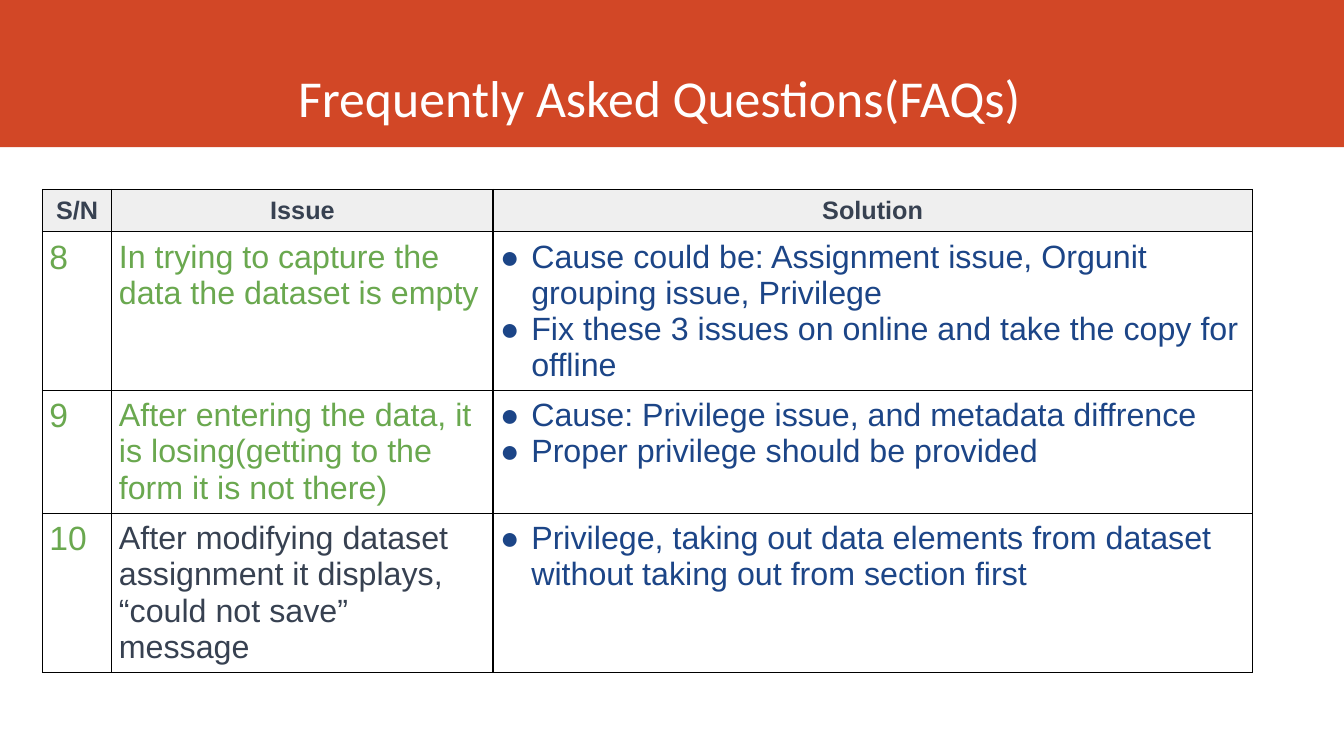
from pptx import Presentation
from pptx import util as u
from pptx.dml.color import RGBColor
from pptx.enum import shapes, text
from pptx.oxml import parse_xml
from pptx.oxml.ns import nsdecls

ORANGE = RGBColor(0xD2, 0x47, 0x26)
WHITE = RGBColor(0xFF, 0xFF, 0xFF)
GREY = RGBColor(0xEF, 0xEF, 0xEF)
SLATE = RGBColor(0x37, 0x41, 0x51)
GREEN = RGBColor(0x6A, 0xA8, 0x4F)
NAVY = RGBColor(0x1C, 0x45, 0x87)

HEADINGS = ["S/N", "Issue", "Solution"]
FAQS = [
    ("8", "In trying to capture the data the dataset is empty", GREEN,
     ["Cause could be: Assignment issue, Orgunit grouping issue, Privilege",
      "Fix these 3 issues on online and take the copy for offline"]),
    ("9", "After entering the data, it is losing(getting to the form it is not there)", GREEN,
     ["Cause: Privilege issue, and metadata diffrence",
      "Proper privilege should be provided"]),
    ("10", "After modifying dataset assignment it displays, “could not save” message", SLATE,
     ["Privilege, taking out data elements from dataset without taking out from section first"]),
]
COLUMN_WIDTHS = [0.69, 3.78, 7.53]
ROW_HEIGHTS = [0.42, 1.57, 1.22, 1.57]


def fill_cell(cell, lines, size, color, heading=False, bulleted=False):
    """Write the lines into a table cell and give it borders and fill."""
    cell.margin_left = cell.margin_right = u.Inches(0.07)
    cell.margin_top = cell.margin_bottom = u.Inches(0.07)
    cell.text_frame.text = "\n".join(lines)
    for paragraph in cell.text_frame.paragraphs:
        paragraph.alignment = text.PP_ALIGN.CENTER if heading else text.PP_ALIGN.LEFT
        font = paragraph.runs[0].font
        font.name, font.size, font.bold = "Arial", u.Pt(size), heading
        font.color.rgb = color
        if bulleted:
            props = paragraph._p.get_or_add_pPr()
            props.set("marL", str(u.Inches(0.31)))
            props.set("indent", str(-u.Inches(0.31)))
            props.append(parse_xml(
                f'<a:buClr {nsdecls("a")}><a:srgbClr val="{color}"/></a:buClr>'))
            props.append(parse_xml(f'<a:buFont {nsdecls("a")} typeface="Arial"/>'))
            props.append(parse_xml(f'<a:buChar {nsdecls("a")} char="●"/>'))
    # Borders come before the fill in the cell properties
    cell_props = cell._tc.get_or_add_tcPr()
    for side in ("lnL", "lnR", "lnT", "lnB"):
        cell_props.append(parse_xml(
            f'<a:{side} {nsdecls("a")} w="{u.Pt(1)}"><a:solidFill>'
            f'<a:srgbClr val="000000"/></a:solidFill></a:{side}>'))
    if heading:
        cell.fill.solid()
        cell.fill.fore_color.rgb = GREY
    else:
        cell.fill.background()


deck = Presentation()
deck.slide_width, deck.slide_height = u.Inches(13.33), u.Inches(7.5)
slide = deck.slides.add_slide(deck.slide_layouts[5])

# Header band, behind the title
band = slide.shapes.add_shape(shapes.MSO_SHAPE.RECTANGLE, 0, 0, deck.slide_width, u.Inches(1.46))
band.fill.solid()
band.fill.fore_color.rgb = ORANGE
band.line.fill.background()
band.shadow.inherit = False
slide.shapes._spTree.insert(2, band._element)

# Title
title = slide.shapes.title
title.left, title.top = u.Inches(0.66), 0
title.width, title.height = u.Inches(11.76), u.Inches(1.32)
frame = title.text_frame
frame.text = "Frequently Asked Questions(FAQs)"
frame.auto_size = text.MSO_AUTO_SIZE.NONE
frame.vertical_anchor = text.MSO_ANCHOR.BOTTOM
heading_line = frame.paragraphs[0]
heading_line.alignment = text.PP_ALIGN.CENTER
heading_line.line_spacing = 1.08
heading_line.space_after = u.Pt(8)
title_font = heading_line.runs[0].font
title_font.name, title_font.size = "Calibri", u.Pt(37)
title_font.color.rgb = WHITE

# FAQ table
faq_table = slide.shapes.add_table(
    len(ROW_HEIGHTS), len(COLUMN_WIDTHS), u.Inches(0.42), u.Inches(1.88),
    u.Inches(sum(COLUMN_WIDTHS)), u.Inches(sum(ROW_HEIGHTS))).table
faq_table.horz_banding = False
for column, width in zip(faq_table.columns, COLUMN_WIDTHS):
    column.width = u.Inches(width)
for row, height in zip(faq_table.rows, ROW_HEIGHTS):
    row.height = u.Inches(height)

for column, label in enumerate(HEADINGS):
    fill_cell(faq_table.cell(0, column), [label], 18, SLATE, heading=True)
for row, (number, issue, issue_color, solutions) in enumerate(FAQS, start=1):
    fill_cell(faq_table.cell(row, 0), [number], 24, GREEN)
    fill_cell(faq_table.cell(row, 1), [issue], 23, issue_color)
    fill_cell(faq_table.cell(row, 2), solutions, 23, NAVY, bulleted=True)

deck.save("out.pptx")
